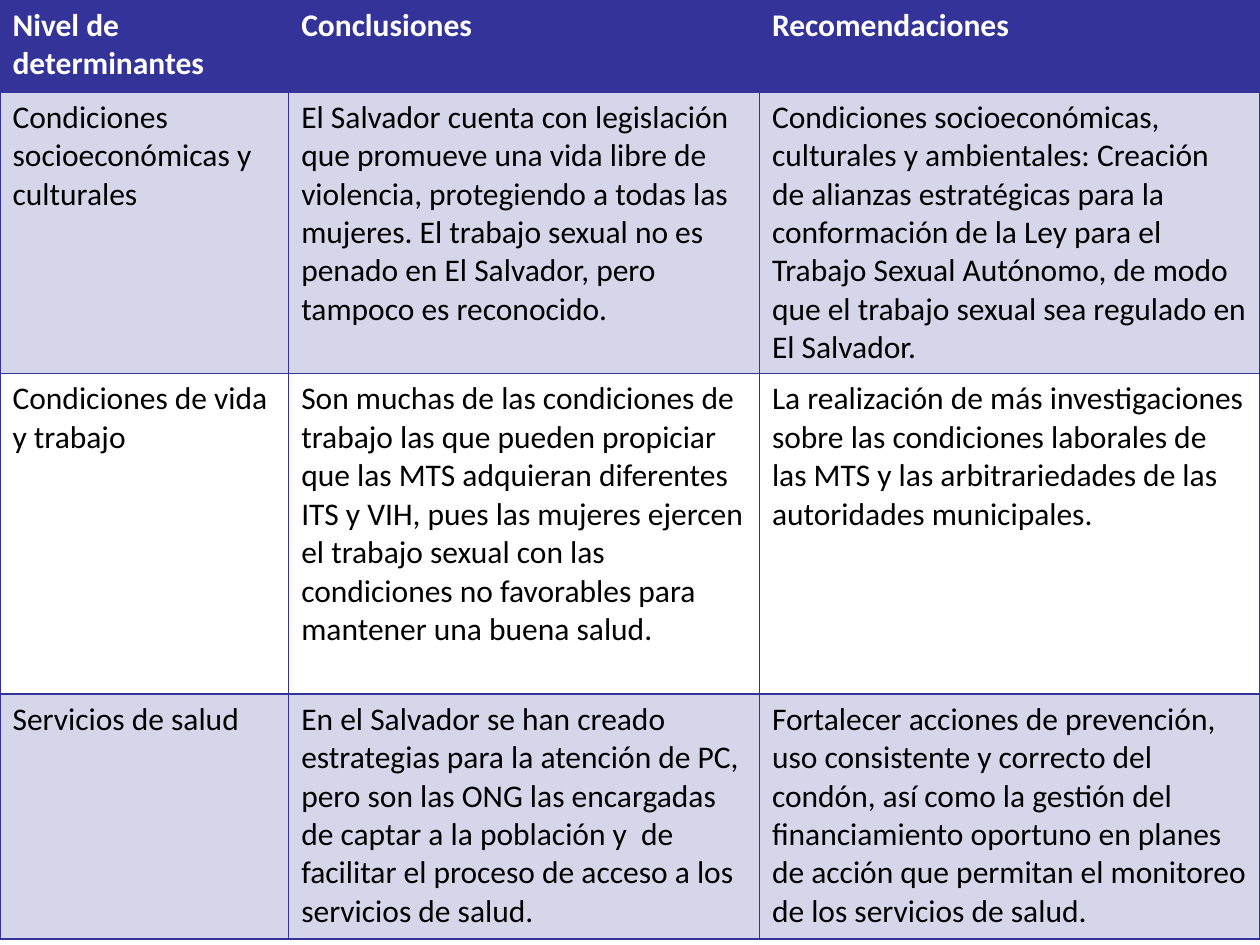
from lxml import etree
from pptx import Presentation
from pptx.dml.color import RGBColor
from pptx.oxml.ns import qn
from pptx.util import Pt

INK = "333399"
ROWS = [
    ("Nivel de determinantes", "Conclusiones", "Recomendaciones"),
    ("Condiciones socioeconómicas y culturales",
     "El Salvador cuenta con legislación que promueve una vida libre de violencia, "
     "protegiendo a todas las mujeres. El trabajo sexual no es penado en El Salvador, "
     "pero tampoco es reconocido.",
     "Condiciones socioeconómicas, culturales y ambientales: Creación de alianzas "
     "estratégicas para la conformación de la Ley para el Trabajo Sexual Autónomo, "
     "de modo que el trabajo sexual sea regulado en El Salvador."),
    ("Condiciones de vida y trabajo",
     "Son muchas de las condiciones de trabajo las que pueden propiciar que las MTS "
     "adquieran diferentes ITS y VIH, pues las mujeres ejercen el trabajo sexual con "
     "las condiciones no favorables para mantener una buena salud.",
     "La realización de más investigaciones sobre las condiciones laborales de las MTS "
     "y las arbitrariedades de las autoridades municipales."),
    ("Servicios de salud",
     "En el Salvador se han creado estrategias para la atención de PC, pero son las ONG "
     "las encargadas de captar a la población y  de facilitar el proceso de acceso a los "
     "servicios de salud.",
     "Fortalecer acciones de prevención, uso consistente y correcto del condón, así como "
     "la gestión del financiamiento oportuno en planes de acción que permitan el "
     "monitoreo de los servicios de salud."),
]
WIDTHS = (165, 269, 286)
HEIGHTS = (52.5, 160.5, 183, 140)


def paint(fill, color, alpha=None):
    fill.solid()
    fill.fore_color.rgb = RGBColor.from_string(color)
    if alpha:
        tone = fill._xPr.find(qn("a:solidFill"))[0]
        etree.SubElement(tone, qn("a:alpha"), val=str(alpha * 1000))


def border(cell, row):
    """Draw all four sides, thicker between the header and the body."""
    props = cell._tc.get_or_add_tcPr()
    for side in "LRTB":
        thick = (row, side) in ((0, "B"), (1, "T"))
        line = etree.SubElement(props, qn("a:ln" + side), w=str(Pt(2 if thick else 1)))
        solid = etree.SubElement(line, qn("a:solidFill"))
        etree.SubElement(solid, qn("a:srgbClr"), val=INK)


def write(cell, words, head):
    run = cell.text_frame.paragraphs[0].add_run()
    run.text = words
    font = run.font
    font.name, font.size, font.bold = "Calibri", Pt(18), head
    paint(font.fill, "FFFFFF" if head else "000000")


def grid(slide, left, top):
    frame = slide.shapes.add_table(len(ROWS), len(WIDTHS), Pt(left), Pt(top),
                                   Pt(sum(WIDTHS)), Pt(sum(HEIGHTS)))
    table = frame.table
    for col, width in zip(table.columns, WIDTHS):
        col.width = Pt(width)
    for i, (texts, height) in enumerate(zip(ROWS, HEIGHTS)):
        table.rows[i].height = Pt(height)
        for j, words in enumerate(texts):
            cell = table.cell(i, j)
            cell.margin_left = cell.margin_right = Pt(7.2)
            cell.margin_top = cell.margin_bottom = Pt(3.6)
            border(cell, i)
            if i == 0:
                paint(cell.fill, INK)
            elif i % 2:
                paint(cell.fill, INK, 20)
            else:
                cell.fill.background()
            write(cell, words, i == 0)


def main():
    deck = Presentation()
    deck.slide_width, deck.slide_height = Pt(720), Pt(540)
    slide = deck.slides.add_slide(deck.slide_layouts[6])
    grid(slide, 0, 0)
    deck.save("out.pptx")


if __name__ == "__main__":
    main()
